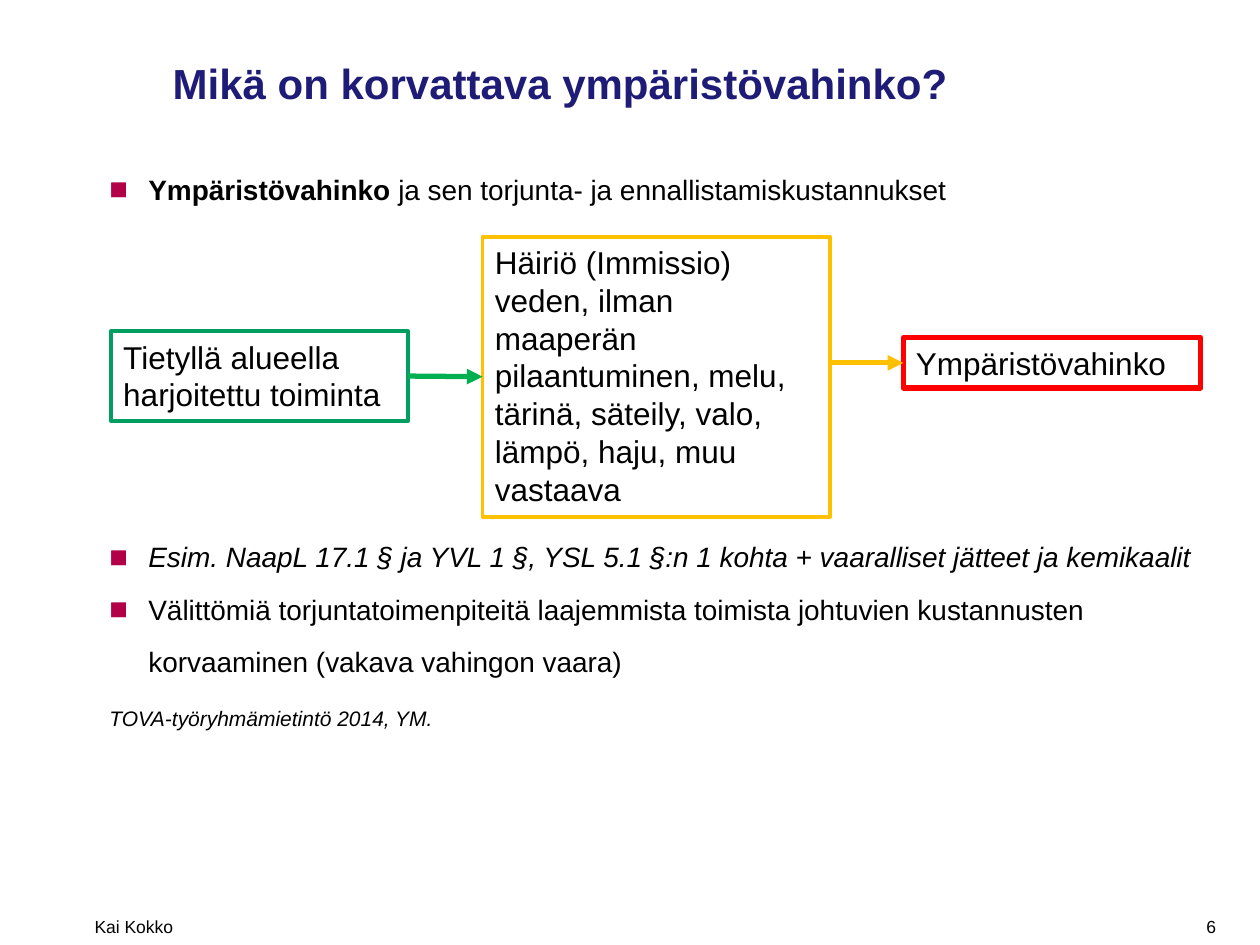
from lxml import etree
from pptx import Presentation
from pptx.dml.color import RGBColor
from pptx.enum.shapes import MSO_CONNECTOR, MSO_SHAPE
from pptx.enum.text import MSO_ANCHOR, MSO_AUTO_SIZE, PP_ALIGN
from pptx.oxml.ns import qn
from pptx.util import Inches, Pt

LEFT, RIGHT = PP_ALIGN.LEFT, PP_ALIGN.RIGHT
FONT = "Arial"
BLACK, NAVY, BULLET = "000000", "1E1C77", "B20049"
LINE_PT = 30
DIAGRAM_LINES = 6  # text lines left free for the diagram

TITLE = "Mikä on korvattava ympäristövahinko?"

# runs (text, style), size, bulleted, free lines above
BODY = [
    ([("Ympäristövahinko", "b"),
      (" ja sen torjunta- ja ennallistamiskustannukset", "")], 16, True, 0),
    ([("Esim. NaapL 17.1 § ja YVL 1 §, YSL 5.1 §:n 1 kohta + vaaralliset "
       "jätteet ja kemikaalit", "i")], 16, True, DIAGRAM_LINES),
    ([("Välittömiä torjuntatoimenpiteitä laajemmista toimista johtuvien "
       "kustannusten korvaaminen (vakava vahingon vaara)", "")], 16, True, 0),
    ([("TOVA-työryhmämietintö 2014, YM.", "i")], 12, False, 0),
]

# text, (left, top, width, height), line colour, line width
BOXES = [
    ("Tietyllä alueella harjoitettu toiminta",
     (0.88, 2.63, 2.36, 0.71), "009E60", 2.25),
    ("Häiriö (Immissio) veden, ilman maaperän pilaantuminen, melu, tärinä, "
     "säteily, valo, lämpö, haju, muu vastaava",
     (3.83, 1.88, 2.76, 2.22), "FFC000", 2.25),
    ("Ympäristövahinko", (7.17, 2.68, 2.36, 0.4), "FF0000", 3),
]

# text, (left, top, width, height), alignment
FOOTERS = [
    ("Kai Kokko", (0.75, 7.22, 6.85, 0.22), LEFT),
    ("6", (9.1, 7.22, 0.55, 0.22), RIGHT),
]


def rgb(value):
    return RGBColor.from_string(value)


def inches(values):
    return [Inches(v) for v in values]


def add_run(p, text, size, color=BLACK, style=""):
    r = p.add_run()
    r.text = text
    r.font.name, r.font.size = FONT, Pt(size)
    r.font.bold, r.font.italic = "b" in style, "i" in style
    r.font.color.rgb = rgb(color)


def add_bullet(p):
    """Give the paragraph a hanging, coloured square bullet."""
    pPr = p._p.get_or_add_pPr()
    pPr.set("marL", str(Inches(0.31)))
    pPr.set("indent", str(-Inches(0.31)))
    color = etree.SubElement(pPr, qn("a:buClr"))
    etree.SubElement(color, qn("a:srgbClr"), val=BULLET)
    etree.SubElement(pPr, qn("a:buSzPct"), val="110000")
    etree.SubElement(pPr, qn("a:buFont"), typeface=FONT)
    etree.SubElement(pPr, qn("a:buChar"), char="■")


def add_title(slide):
    s = slide.shapes.title
    s.left, s.top, s.width, s.height = inches((1.27, 0.15, 7.93, 0.76))
    tf = s.text_frame
    tf.auto_size = MSO_AUTO_SIZE.NONE
    tf.vertical_anchor = MSO_ANCHOR.BOTTOM
    p = tf.paragraphs[0]
    p.alignment, p.line_spacing = LEFT, Pt(LINE_PT)
    add_run(p, TITLE, 24, NAVY, "b")


def add_body(slide):
    tf = slide.shapes.add_textbox(*inches((0.77, 1.17, 8.93, 4.7))).text_frame
    tf.word_wrap = True
    for i, (runs, size, bulleted, free_lines) in enumerate(BODY):
        p = tf.add_paragraph() if i else tf.paragraphs[0]
        p.line_spacing = Pt(LINE_PT)
        if free_lines:
            p.space_before = Pt(free_lines * LINE_PT)
        if bulleted:
            add_bullet(p)
        for text, style in runs:
            add_run(p, text, size, style=style)


def add_box(slide, text, place, color, width):
    s = slide.shapes.add_shape(MSO_SHAPE.RECTANGLE, *inches(place))
    s.shadow.inherit = False
    s.fill.background()
    s.line.color.rgb, s.line.width = rgb(color), Pt(width)
    tf = s.text_frame
    tf.word_wrap = True
    tf.vertical_anchor = MSO_ANCHOR.TOP
    p = tf.paragraphs[0]
    p.alignment = LEFT
    add_run(p, text, 18)
    return s


def add_arrow(slide, start, end, color):
    """Draw a level arrow from the right side of start to the left of end."""
    y = end.top + end.height // 2
    c = slide.shapes.add_connector(
        MSO_CONNECTOR.STRAIGHT, start.left + start.width, y, end.left, y)
    c.line.color.rgb, c.line.width = rgb(color), Pt(3)
    etree.SubElement(c.line._get_or_add_ln(), qn("a:tailEnd"), type="triangle")
    etree.SubElement(c._element.spPr, qn("a:effectLst"))
    return c


def add_footer(slide, text, place, align):
    tf = slide.shapes.add_textbox(*inches(place)).text_frame
    tf.word_wrap = True
    tf.margin_left = tf.margin_right = 0
    p = tf.paragraphs[0]
    p.alignment = align
    add_run(p, text, 10)


def main():
    prs = Presentation()
    prs.slide_width, prs.slide_height = inches((10, 7.5))
    slide = prs.slides.add_slide(prs.slide_layouts[5])

    add_title(slide)
    for footer in FOOTERS:
        add_footer(slide, *footer)
    add_body(slide)

    activity, nuisance, damage = [add_box(slide, *box) for box in BOXES]
    first = add_arrow(slide, activity, nuisance, "00B050")
    first.begin_connect(activity, 3)
    first.end_connect(nuisance, 1)
    second = add_arrow(slide, nuisance, damage, "FFC000")
    second.end_connect(damage, 1)

    prs.save("out.pptx")


if __name__ == "__main__":
    main()
